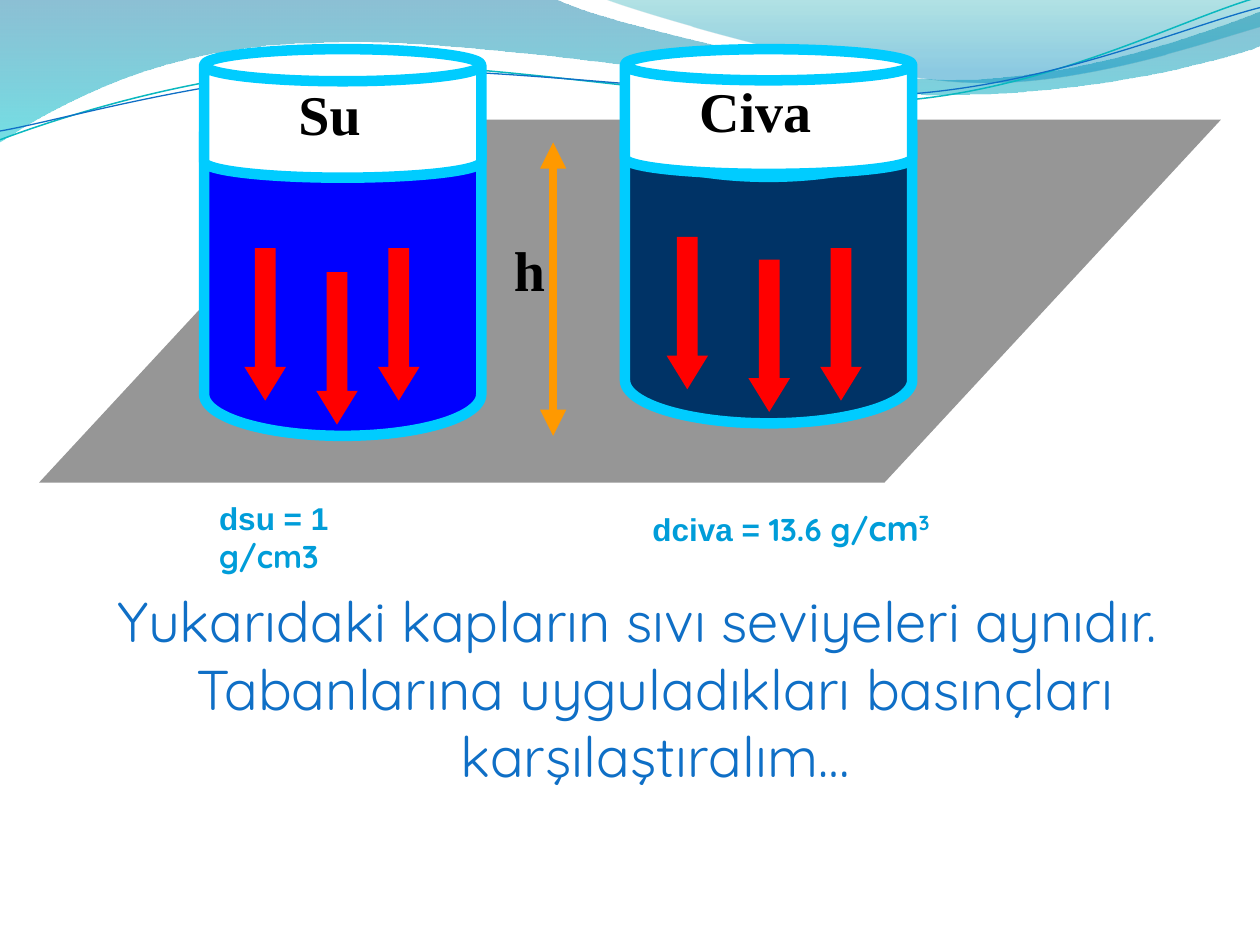
from math import cos, radians, sin
from pptx import Presentation
from pptx.dml.color import RGBColor
from pptx.enum.shapes import MSO_CONNECTOR as Conn, MSO_SHAPE as Shape
from pptx.enum.text import PP_ALIGN as Align
from pptx.oxml.ns import qn
from pptx.util import Inches, Pt
from lxml.etree import SubElement

COLORS = {
    "floor": "969696", "glass": "00CCFF", "empty": "FFFFFF", "water": "0000FF",
    "mercury": "003366", "force": "FF0000", "height": "FF9900", "label": "000000",
    "density": "009DD9", "body": "0F6FC6", "teal": "0AB8BF",
}
SERIF, SANS, ROUND = "Times New Roman", "Arial", "Quicksand"

# Waves: box, then a start point, lines (2 numbers) and Bezier curves (6 numbers)
BANDS = [
    ((-0.01, -0.01, 10.02, 1.14),
     [(0, -0.01), (4.4, -0.01), (4.76, 0.17, 6.64, 0.63, 7.58, 0.63),
      (8.53, 0.63, 9.58, 0.26, 10, 0.09), (10.01, 0.36),
      (9.83, 0.44, 8.7, 0.76, 7.46, 0.75), (6.22, 0.75, 3.82, 0.28, 2.57, 0.34),
      (1.29, 0.35, 0.46, 0.83, -0.01, 1.13), (0, -0.01)],
     [(0, "0074A1", 45), (1, "00C6CF", 55)]),
    ((4.79, -0.01, 5.21, 0.7),
     [(4.79, -0.01), (5.09, 0.11, 6.82, 0.62, 7.69, 0.65),
      (8.56, 0.69, 9.61, 0.32, 10, 0.21), (10, 0), (4.79, -0.01)],
     [(0, "00A1A9", 30), (0.8, "008BBF", 45)]),
]
TILT = -2.7
STRANDS = [
    ((-0.02, 0.22, 10.02, 0.71),
     [(0, 1.11), (0.48, 0.93, 1.58, 0.57, 2.77, 0.52),
      (3.95, 0.47, 5.93, 0.89, 7.13, 0.8), (8.33, 0.71, 9.38, 0.15, 9.98, -0.02)],
     "teal", 0.85),
    ((-0.02, 0.3, 10.03, 0.58),
     [(0, 1.04), (0.47, 0.96, 1.64, 0.61, 2.83, 0.56),
      (4.03, 0.51, 5.97, 0.83, 7.17, 0.75), (8.36, 0.67, 9.41, 0.21, 10, 0.06)],
     "body", 0.75),
]

# Tanks: left, width, liquid colour, (top, height) of liquid and of empty part
TANKS = [
    (1.62, 2.2, "water", (0.73, 2.73), (0.39, 1.02)),
    (4.96, 2.28, "mercury", (0.72, 2.64), (0.39, 0.99)),
]
FORCES = [(2.51, 2.16), (3, 1.97), (1.94, 1.97), (5.94, 2.06), (5.29, 1.88), (6.51, 1.97)]
LABELS = [("h", 3.98, 1.82, 0.49), ("Su", 2.27, 0.58, 0.9), ("Civa", 5.45, 0.56, 1.39)]

# Densities: box, then runs of text, font, size and superscript
DENSITIES = [
    ((1.64, 3.91, 1.88, 0.4),
     [("dsu = 1 ", SANS, 18, False), ("g/cm3", ROUND, 18, False)]),
    ((5.08, 3.97, 2.46, 0.44),
     [("dciva = ", SANS, 18, False), ("13.6 g/", ROUND, 18, False),
      ("cm", ROUND, 20, False), ("3", ROUND, 20, True)]),
]
QUESTION = ("Yukarıdaki kapların sıvı seviyeleri aynıdır. Tabanlarına "
            "uyguladıkları basınçları karşılaştıralım…")

prs = Presentation()
prs.slide_width, prs.slide_height = Inches(10), Inches(7.5)
shapes = prs.slides.add_slide(prs.slide_layouts[6]).shapes


def rgb(name):
    return RGBColor.from_string(COLORS[name])


def add_wave(parent, box, steps, tilt=0, close=False):
    """Add an outline of true curves; steps are given as seen after the tilt."""
    left, top, width, height = box
    right, low = left + width, top + height
    corners = [(Inches(x), Inches(y))
               for x, y in ((left, top), (right, top), (right, low), (left, low))]
    pen = parent.build_freeform(*corners[0])
    pen.add_line_segments(corners[1:], close=False)
    wave = pen.convert_to_shape()
    wave.shadow.inherit = False
    wave.rotation = tilt % 360
    path = next(wave.element.iter(qn("a:path")))
    for old in list(path):
        path.remove(old)
    c, s = cos(radians(tilt)), sin(radians(tilt))
    for i, step in enumerate(steps):
        kind = "a:moveTo" if i == 0 else "a:lnTo" if len(step) == 2 else "a:cubicBezTo"
        node = SubElement(path, qn(kind))
        for x, y in zip(step[::2], step[1::2]):
            dx, dy = x - left - width / 2, y - top - height / 2
            point = SubElement(node, qn("a:pt"))
            point.set("x", str(Inches(width / 2 + dx * c + dy * s)))
            point.set("y", str(Inches(height / 2 - dx * s + dy * c)))
    if close:
        SubElement(path, qn("a:close"))
    return wave


def add_solid(parent, kind, box, fill, adjust, edge=None):
    solid = parent.add_shape(kind, *map(Inches, box))
    solid.shadow.inherit = False
    for i, value in enumerate(adjust):
        solid.adjustments[i] = value
    solid.fill.solid()
    solid.fill.fore_color.rgb = rgb(fill)
    if edge:
        solid.line.color.rgb = rgb(edge)
        solid.line.width = Pt(6)
    else:
        solid.line.fill.background()


def add_text(parent, box, color, bold=False):
    frame = parent.add_textbox(*map(Inches, box)).text_frame
    frame.word_wrap = True
    para = frame.paragraphs[0]
    para.font.color.rgb = rgb(color)
    para.font.bold = bold
    return para


# Wave bands and strands
for box, steps, stops in BANDS:
    band = add_wave(shapes, box, steps, close=True)
    band.line.fill.background()
    band.fill.gradient()
    band.fill.gradient_angle = 270
    for stop, (place, color, _) in zip(band.fill.gradient_stops, stops):
        stop.position = place
        stop.color.rgb = RGBColor.from_string(color)
    tints = list(band.element.spPr.iter(qn("a:srgbClr")))
    for tint, (_, _, alpha) in zip(tints, stops):
        SubElement(tint, qn("a:alpha")).set("val", str(alpha * 1000))
strands = shapes.add_group_shape().shapes
for box, steps, color, width in STRANDS:
    strand = add_wave(strands, box, steps, TILT)
    strand.fill.background()
    strand.line.color.rgb = rgb(color)
    strand.line.width = Pt(width)

# Floor, tanks and force arrows
scene = shapes.add_group_shape().shapes
add_solid(scene, Shape.PARALLELOGRAM, (0.31, 0.95, 9.38, 2.88), "floor", [0.927])
for left, width, liquid, full, empty in TANKS:
    for (top, height), fill, rim in ((full, liquid, 0.3), (empty, "empty", 0.25)):
        add_solid(scene, Shape.CAN, (left, top, width, height), fill, [rim], "glass")
for left, top in FORCES:
    add_solid(scene, Shape.DOWN_ARROW, (left, top, 0.33, 1.21), "force", [0.5, 0.812])

# Height arrow
height = scene.add_connector(Conn.STRAIGHT, *map(Inches, (4.39, 1.13, 4.39, 3.46)))
height.line.color.rgb = rgb("height")
height.line.width = Pt(5)
edge = height.element.spPr.find(qn("a:ln"))
for end in ("a:headEnd", "a:tailEnd"):
    SubElement(edge, qn(end)).set("type", "triangle")
SubElement(height.element.spPr, qn("a:effectLst"))

# Labels
for word, left, top, width in LABELS:
    para = add_text(scene, (left, top, width, 0.86), "label", True)
    para.text = word
    para.font.name, para.font.size = SERIF, Pt(32)
    para.space_before = Pt(4)

# Question
para = add_text(shapes, (0, 4.61, 10, 2.57), "body")
para.text = QUESTION
para.font.name, para.font.size = ROUND, Pt(32)
para.alignment, para.space_before = Align.CENTER, Pt(4)
props = para._p.get_or_add_pPr()
props.set("marL", str(Inches(0.4)))
props.set("indent", str(Inches(-0.28)))

# Densities
for box, runs in DENSITIES:
    para = add_text(shapes, box, "density", True)
    for word, face, size, raised in runs:
        run = para.add_run()
        run.text = word
        run.font.name, run.font.size = face, Pt(size)
        if raised:
            run.font._element.set("baseline", "30000")

prs.save("out.pptx")
